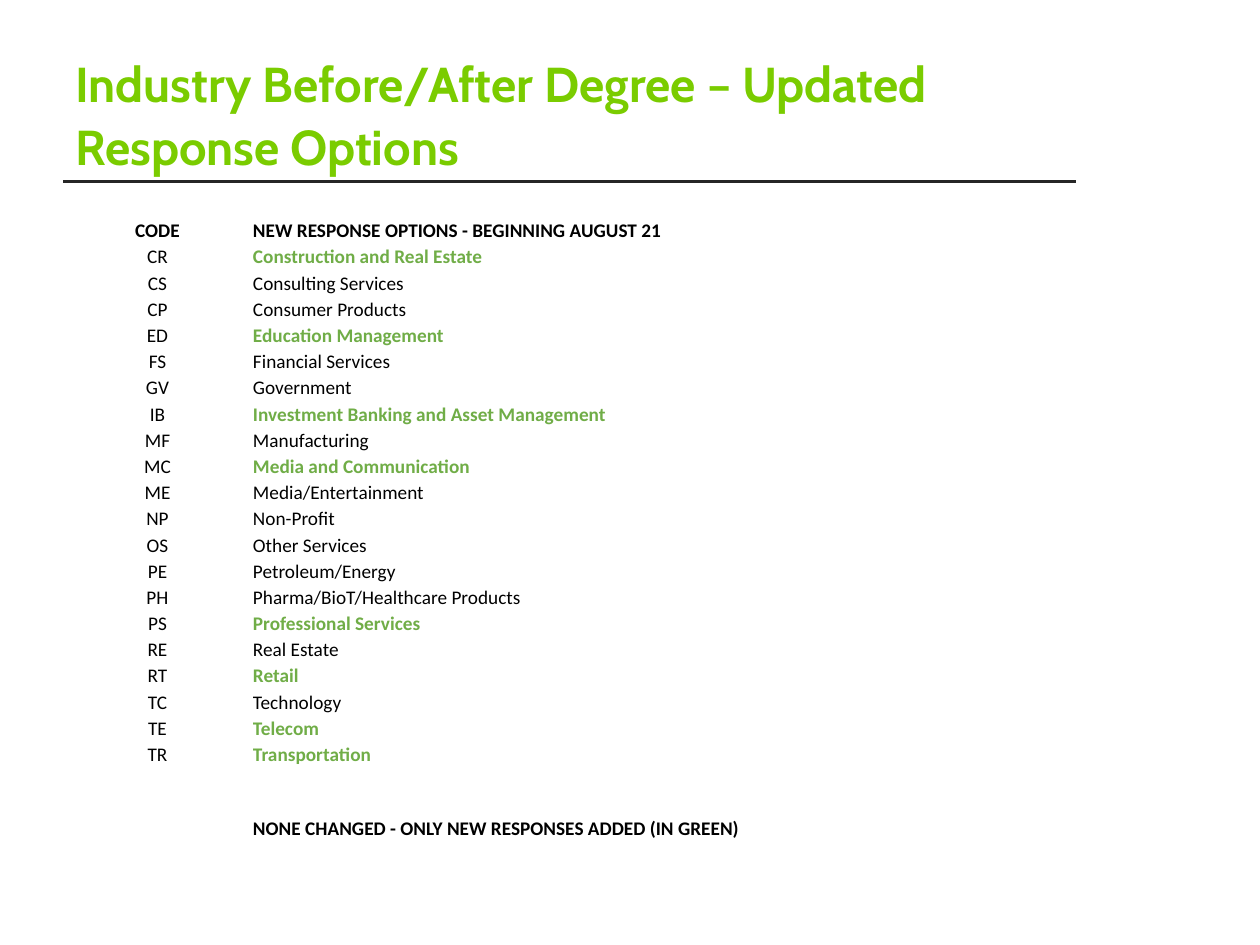
from lxml import etree
from pptx import Presentation
from pptx.dml.color import RGBColor
from pptx.enum.shapes import MSO_CONNECTOR
from pptx.enum.text import MSO_ANCHOR, MSO_AUTO_SIZE, PP_ALIGN
from pptx.oxml.ns import qn
from pptx.util import Cm, Pt

LEFT, CENTER = PP_ALIGN.LEFT, PP_ALIGN.CENTER
BOTTOM = MSO_ANCHOR.BOTTOM
STRAIGHT = MSO_CONNECTOR.STRAIGHT
NO_AUTOFIT = MSO_AUTO_SIZE.NONE

TITLE_GREEN = RGBColor(0x7A, 0xCC, 0x00)
NEW_GREEN = RGBColor(0x70, 0xAD, 0x47)
BLACK = RGBColor(0x00, 0x00, 0x00)
RULE_GRAY = RGBColor(0x26, 0x26, 0x26)

INDUSTRIES = [
    ("CR", "Construction and Real Estate"),
    ("CS", "Consulting Services"),
    ("CP", "Consumer Products"),
    ("ED", "Education Management"),
    ("FS", "Financial Services"),
    ("GV", "Government"),
    ("IB", "Investment Banking and Asset Management"),
    ("MF", "Manufacturing"),
    ("MC", "Media and Communication"),
    ("ME", "Media/Entertainment"),
    ("NP", "Non-Profit"),
    ("OS", "Other Services"),
    ("PE", "Petroleum/Energy"),
    ("PH", "Pharma/BioT/Healthcare Products"),
    ("PS", "Professional Services"),
    ("RE", "Real Estate"),
    ("RT", "Retail"),
    ("TC", "Technology"),
    ("TE", "Telecom"),
    ("TR", "Transportation"),
]
NEW_CODES = {"CR", "ED", "IB", "MC", "PS", "RT", "TE", "TR"}
HEADER = ("CODE", "NEW RESPONSE OPTIONS - BEGINNING AUGUST 21")
FOOTNOTE = "NONE CHANGED - ONLY NEW RESPONSES ADDED (IN GREEN)"
ROWS = [HEADER, *INDUSTRIES, ("", ""), ("", FOOTNOTE)]
BOLD_TEXTS = {*HEADER, FOOTNOTE}

MARGIN_LEFT = Cm(1.27)
CONTENT_WIDTH = Cm(20.42)
RULE_TOP = Cm(3.66)
TABLE_TOP = Cm(4.37)
COLUMN_WIDTHS = [Cm(3.81), Cm(12.62)]
ROW_HEIGHT = Cm(11.62) // 22
FOOTNOTE_HEIGHT = Cm(0.97)


def set_format(target, values):
    for name, value in values.items():
        setattr(target, name, value)


presentation = Presentation()
presentation.slide_width = Cm(25.4)
presentation.slide_height = Cm(19.05)
slide = presentation.slides.add_slide(presentation.slide_layouts[5])

# Title and the rule under it
title = slide.shapes.title
set_format(title, {"left": MARGIN_LEFT, "top": Cm(0.89),
                   "width": CONTENT_WIDTH, "height": Cm(2.77)})
set_format(title.text_frame, {
    "text": "Industry Before/After Degree – Updated Response Options",
    "word_wrap": True, "auto_size": NO_AUTOFIT, "vertical_anchor": BOTTOM})
paragraph = title.text_frame.paragraphs[0]
set_format(paragraph, {"alignment": LEFT, "line_spacing": Pt(36)})
font = paragraph.runs[0].font
set_format(font, {"name": "Cabin", "size": Pt(28), "bold": True})
font.color.rgb = TITLE_GREEN

rule = slide.shapes.add_connector(
    STRAIGHT, MARGIN_LEFT, RULE_TOP, MARGIN_LEFT + CONTENT_WIDTH, RULE_TOP)
rule.line.width = Pt(1.5)
rule.line.color.rgb = RULE_GRAY
etree.SubElement(rule._element.spPr, qn("a:effectLst"))

# Table of industry codes
table = slide.shapes.add_table(
    len(ROWS), len(COLUMN_WIDTHS), MARGIN_LEFT, TABLE_TOP, sum(COLUMN_WIDTHS),
    ROW_HEIGHT * (len(ROWS) - 1) + FOOTNOTE_HEIGHT).table
set_format(table, {"first_row": False, "horz_banding": False})
for column, width in zip(table.columns, COLUMN_WIDTHS):
    column.width = width
for row in table.rows:
    row.height = ROW_HEIGHT
table.rows[len(ROWS) - 1].height = FOOTNOTE_HEIGHT

for row_index, texts in enumerate(ROWS):
    for column_index, text in enumerate(texts):
        cell = table.cell(row_index, column_index)
        cell.fill.background()
        set_format(cell, {
            "margin_left": Cm(0.02), "margin_right": Cm(0.02),
            "margin_top": Cm(0.02), "margin_bottom": 0,
            "vertical_anchor": BOTTOM})
        paragraph = cell.text_frame.paragraphs[0]
        paragraph.alignment = LEFT if column_index else CENTER
        if not text:
            # An empty cell takes its line height from the end mark
            paragraph._p.get_or_add_endParaRPr().set("sz", "1100")
            continue
        is_new = column_index == 1 and texts[0] in NEW_CODES
        run = paragraph.add_run()
        run.text = text
        set_format(run.font, {"name": "Calibri", "size": Pt(11),
                              "bold": is_new or text in BOLD_TEXTS})
        run.font.color.rgb = NEW_GREEN if is_new else BLACK

presentation.save("out.pptx")
